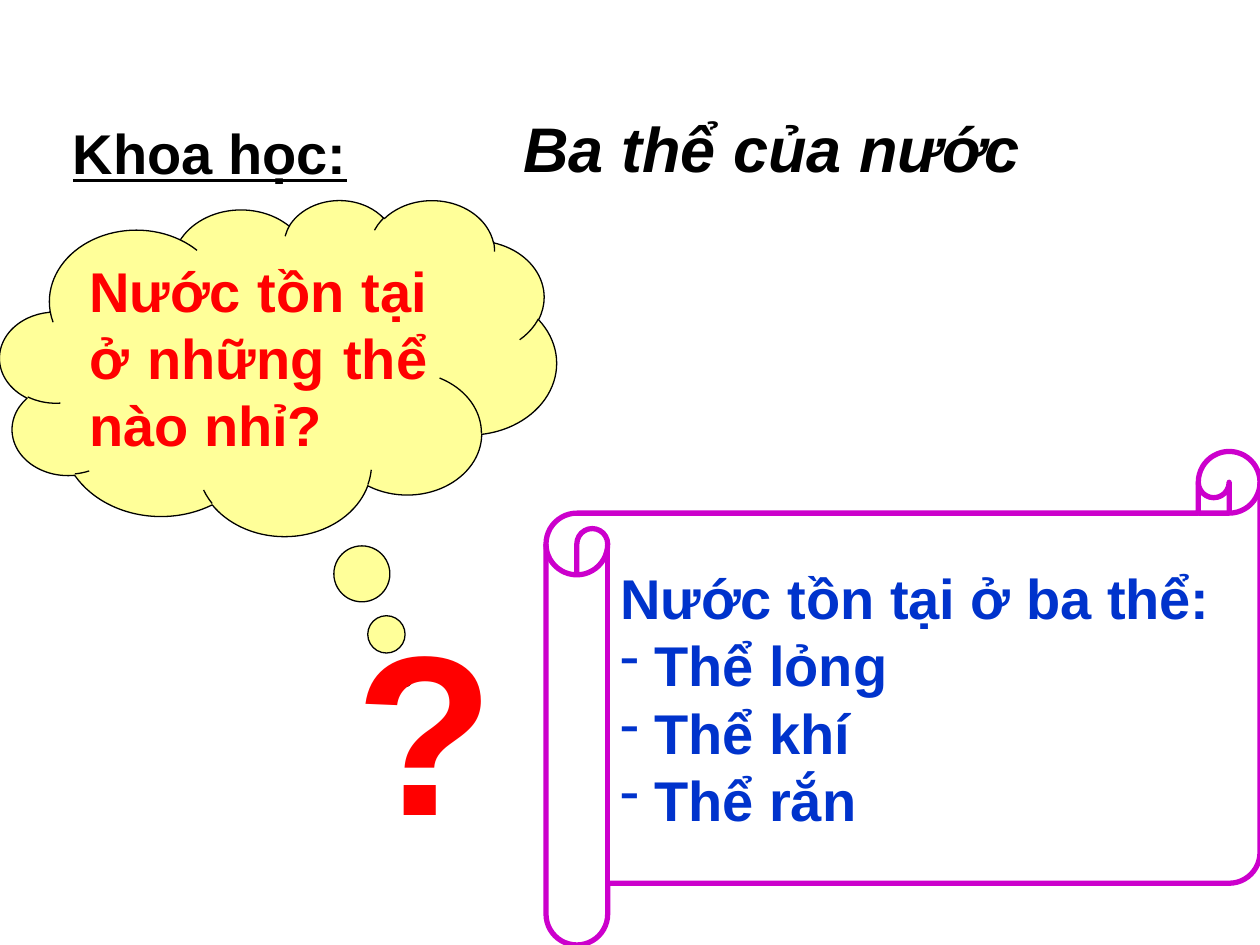
from dataclasses import dataclass

from lxml import etree
from pptx import Presentation
from pptx import util as u
from pptx.dml.color import RGBColor
from pptx.enum import shapes, text
from pptx.oxml.ns import qn

PX = u.Inches(1) // 120
SHAPE, ALIGN, ANCHOR = shapes.MSO_SHAPE, text.PP_ALIGN, text.MSO_ANCHOR


@dataclass(frozen=True)
class Theme:
    font: str = "Arial"
    ink: str = "000000"
    question: str = "FF0000"
    answer: str = "0033CC"
    cloud: str = "FFFF99"
    scroll: str = "CC00CC"
    body_size: int = 32
    title_size: int = 36
    mark_size: int = 130


class Lesson:
    def __init__(self, slide, theme):
        self.slide, self.theme = slide, theme

    def add_lines(self, shape, lines, size, color, align=ALIGN.CENTER,
                  anchor=ANCHOR.MIDDLE, wrap=False, italic=None, underline=None):
        """Fill the shape with bold lines and return their paragraphs."""
        frame = shape.text_frame
        frame.auto_size = text.MSO_AUTO_SIZE.NONE
        frame.word_wrap, frame.vertical_anchor = wrap, anchor
        for index, line in enumerate(lines):
            paragraph = frame.add_paragraph() if index else frame.paragraphs[0]
            paragraph.alignment = align
            run = paragraph.add_run()
            run.text = line
            font = run.font
            font.name, font.size, font.bold = self.theme.font, u.Pt(size), True
            font.italic, font.underline = italic, underline
            font.color.rgb = RGBColor.from_string(color)
        return frame.paragraphs

    def title(self, box, line):
        heading = self.slide.shapes.title
        heading.left, heading.top, heading.width, heading.height = [v * PX for v in box]
        self.add_lines(heading, [line], self.theme.title_size, self.theme.ink,
                       italic=True)

    def label(self, box, line, size, color, underline=None):
        holder = self.slide.shapes.add_textbox(*[v * PX for v in box])
        self.add_lines(holder, [line], size, color, underline=underline)

    def panel(self, preset, box, adjustments, line_color, line_width, fill=None):
        shape = self.slide.shapes.add_shape(preset, *[v * PX for v in box])
        shape.shadow.inherit = False
        for index, value in enumerate(adjustments):
            shape.adjustments[index] = value
        if fill:
            shape.fill.solid()
            shape.fill.fore_color.rgb = RGBColor.from_string(fill)
        else:
            shape.fill.background()
        shape.line.color.rgb = RGBColor.from_string(line_color)
        shape.line.width = u.Pt(line_width)
        return shape

    def dash(self, paragraph):
        props = paragraph._p.get_or_add_pPr()
        etree.SubElement(props, qn("a:buFontTx"))
        etree.SubElement(props, qn("a:buChar")).set("char", "-")


def main():
    deck = Presentation()
    deck.slide_width, deck.slide_height = 1200 * PX, 900 * PX
    theme = Theme()
    lesson = Lesson(deck.slides.add_slide(deck.slide_layouts[5]), theme)

    lesson.label((0, 70, 400, 150), "Khoa học:", theme.body_size, theme.ink,
                 underline=True)
    lesson.title((420, 50, 630, 180), "Ba thể của nước")

    cloud = lesson.panel(SHAPE.CLOUD_CALLOUT, (0, 190, 530, 320), (0.226, 0.923),
                         theme.ink, 0.75, theme.cloud)
    lesson.add_lines(cloud, ["Nước tồn tại ở những thể nào nhỉ?"], theme.body_size,
                     theme.question, ALIGN.JUSTIFY, ANCHOR.TOP, wrap=True)

    scroll = lesson.panel(SHAPE.HORIZONTAL_SCROLL, (520, 430, 680, 470), (0.125,),
                          theme.scroll, 3)
    answer = ["Nước tồn tại ở ba thể:", " Thể lỏng", " Thể khí", " Thể rắn"]
    _, *states = lesson.add_lines(scroll, answer, theme.body_size, theme.answer,
                                  ALIGN.JUSTIFY)
    for state in states:
        lesson.dash(state)

    lesson.label((310, 590, 190, 200), "?", theme.mark_size, theme.question)
    deck.save("out.pptx")


if __name__ == "__main__":
    main()
